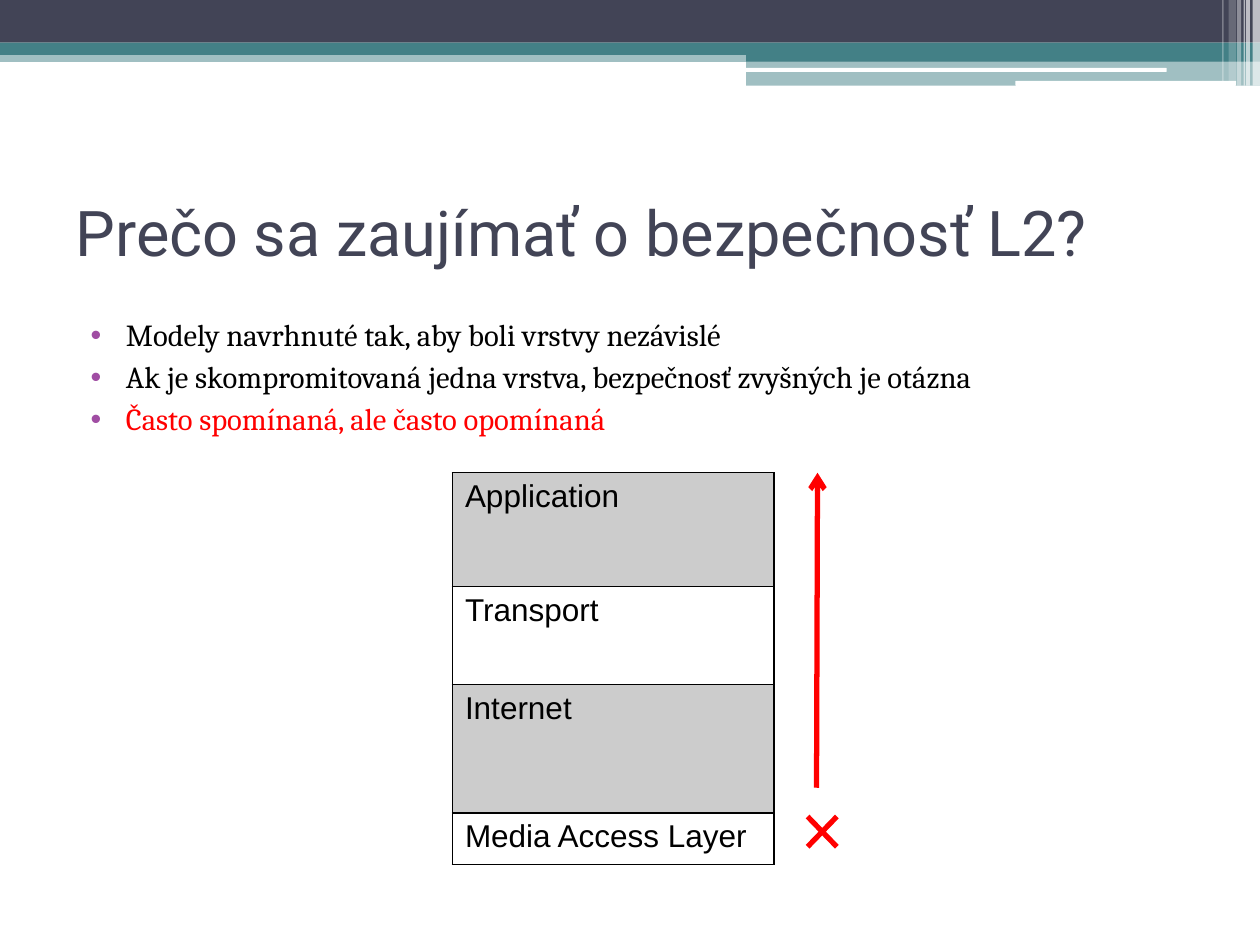
import dataclasses

import lxml.etree
import pptx
import pptx.dml.color
import pptx.enum.shapes
import pptx.enum.text
import pptx.oxml.ns
import pptx.util

Cm = pptx.util.Cm
Pt = pptx.util.Pt
qn = pptx.oxml.ns.qn
SHAPES = pptx.enum.shapes.MSO_SHAPE

COLORS = {
    "navy": "424456",
    "teal": "438086",
    "white": "FFFFFF",
    "black": "000000",
    "red": "FF0000",
    "bullet": "A04DA3",
}


@dataclasses.dataclass
class Band:
    left: float
    top: float
    width: float
    height: float
    color: str
    opacity: int = 100
    rounded: bool = False


@dataclasses.dataclass
class Layer:
    name: str
    height: float
    shaded: bool


BANDS = [
    Band(0, 1.02, 25.4, 0.23, "teal", 50),
    Band(0, 0, 25.4, 0.86, "navy"),
    Band(0, 0.86, 25.4, 0.25, "teal"),
    Band(15.04, 0.99, 10.36, 0.25, "teal"),
    Band(15.04, 1.22, 10.36, 0.51, "teal", 50),
    Band(15.01, 1.37, 8.51, 0.08, "white", rounded=True),
    Band(20.47, 1.63, 4.45, 0.1, "white", rounded=True),
    # Translucent stripes at the right edge
    Band(25.25, 0, 0.15, 1.73, "white", 65),
    Band(25.12, 0, 0.08, 1.73, "white", 65),
    Band(25.07, 0, 0.03, 1.73, "white", 60),
    Band(24.94, 0, 0.08, 1.73, "white", 40),
    Band(24.77, 0, 0.15, 1.63, "white", 20),
    Band(24.64, 0, 0.03, 1.63, "white", 30),
]
LAYERS = [
    Layer("Application", 2.29, True),
    Layer("Transport", 1.98, False),
    Layer("Internet", 2.59, True),
    Layer("Media Access Layer", 1.04, False),
]
POINTS = [
    ("Modely navrhnuté tak, aby boli vrstvy nezávislé", "black"),
    ("Ak je skompromitovaná jedna vrstva, bezpečnosť zvyšných je otázna", "black"),
    ("Často spomínaná, ale často opomínaná", "red"),
]


def rgb(name: str) -> pptx.dml.color.RGBColor:
    return pptx.dml.color.RGBColor.from_string(COLORS[name])


def set_fill(fill, properties, color: str, opacity: int = 100) -> None:
    fill.solid()
    fill.fore_color.rgb = rgb(color)
    if opacity < 100:
        value = properties.find(qn("a:solidFill")).find(qn("a:srgbClr"))
        lxml.etree.SubElement(value, qn("a:alpha"), val=str(opacity * 1000))


def write(para, text: str, *, font: str, size: float, color: str) -> None:
    span = para.add_run()
    span.text = text
    span.font.name = font
    span.font.size = Pt(size)
    span.font.color.rgb = rgb(color)


def add_band(page, band: Band) -> None:
    kind = SHAPES.ROUNDED_RECTANGLE if band.rounded else SHAPES.RECTANGLE
    box = page.shapes.add_shape(
        kind, Cm(band.left), Cm(band.top), Cm(band.width), Cm(band.height))
    box.shadow.inherit = False
    box.line.fill.background()
    set_fill(box.fill, box._element.spPr, band.color, band.opacity)


def add_bullet(para) -> None:
    properties = para._p.get_or_add_pPr()
    properties.set("marL", str(Cm(1.02)))
    properties.set("indent", str(Cm(-0.71)))
    tint = lxml.etree.SubElement(properties, qn("a:buClr"))
    lxml.etree.SubElement(tint, qn("a:srgbClr"), val=COLORS["bullet"])
    lxml.etree.SubElement(properties, qn("a:buFont"), typeface="Arial")
    lxml.etree.SubElement(properties, qn("a:buChar"), char="•")


def add_borders(cell) -> None:
    properties = cell._tc.get_or_add_tcPr()
    for side in ("lnL", "lnR", "lnT", "lnB"):
        border = lxml.etree.SubElement(properties, qn(f"a:{side}"), w=str(Pt(1)))
        solid = lxml.etree.SubElement(border, qn("a:solidFill"))
        lxml.etree.SubElement(solid, qn("a:srgbClr"), val=COLORS["black"])


def add_red_line(shapes, x1: float, y1: float, x2: float, y2: float,
                 arrow: bool = False) -> None:
    line = shapes.add_connector(
        pptx.enum.shapes.MSO_CONNECTOR.STRAIGHT, Cm(x1), Cm(y1), Cm(x2), Cm(y2))
    line.line.color.rgb = rgb("red")
    line.line.width = Pt(3)
    if arrow:
        lxml.etree.SubElement(line.line._get_or_add_ln(), qn("a:tailEnd"), type="arrow")
    lxml.etree.SubElement(line._element.spPr, qn("a:effectLst"))


def add_title(page, text: str) -> None:
    title = page.shapes.title
    title.left, title.top, title.width, title.height = (
        Cm(1.27), Cm(3.18), Cm(22.86), Cm(2.97))
    title.text_frame.vertical_anchor = pptx.enum.text.MSO_ANCHOR.MIDDLE
    para = title.text_frame.paragraphs[0]
    para.alignment = pptx.enum.text.PP_ALIGN.LEFT
    write(para, text, font="Roboto", size=36, color="navy")


def add_points(page) -> None:
    frame = page.shapes.add_textbox(
        Cm(1.27), Cm(6.25), Cm(22.86), Cm(2.49)).text_frame
    frame.word_wrap = True
    for index, (text, color) in enumerate(POINTS):
        para = frame.add_paragraph() if index else frame.paragraphs[0]
        para.space_before = Pt(3)
        add_bullet(para)
        write(para, text, font="Cambria", size=17.5, color=color)


def add_layer_table(page) -> None:
    height = sum(layer.height for layer in LAYERS)
    table = page.shapes.add_table(
        len(LAYERS), 1, Cm(9.12), Cm(9.53), Cm(6.48), Cm(height)).table
    table.first_row = False
    table.horz_banding = False
    for row, layer in zip(table.rows, LAYERS):
        row.height = Cm(layer.height)
        cell = row.cells[0]
        add_borders(cell)
        if layer.shaded:
            set_fill(cell.fill, cell._tc.tcPr, "black", 20)
        else:
            cell.fill.background()
        write(cell.text_frame.paragraphs[0], layer.name,
              font="Arial", size=18, color="black")


def main() -> None:
    deck = pptx.Presentation()
    deck.slide_width, deck.slide_height = Cm(25.4), Cm(19.05)
    page = deck.slides.add_slide(deck.slide_layouts[5])

    # Header decoration
    for band in BANDS:
        add_band(page, band)

    # Text and protocol layers
    add_title(page, "Prečo sa zaujímať o bezpečnosť L2?")
    add_points(page)
    add_layer_table(page)

    # Cross at the lowest layer, arrow towards the upper ones
    cross = page.shapes.add_group_shape()
    add_red_line(cross.shapes, 16.87, 16.46, 16.28, 17.07)
    add_red_line(cross.shapes, 16.28, 16.46, 16.87, 17.07)
    add_red_line(page.shapes, 16.46, 15.88, 16.48, 9.53, arrow=True)

    deck.save("out.pptx")


if __name__ == "__main__":
    main()
